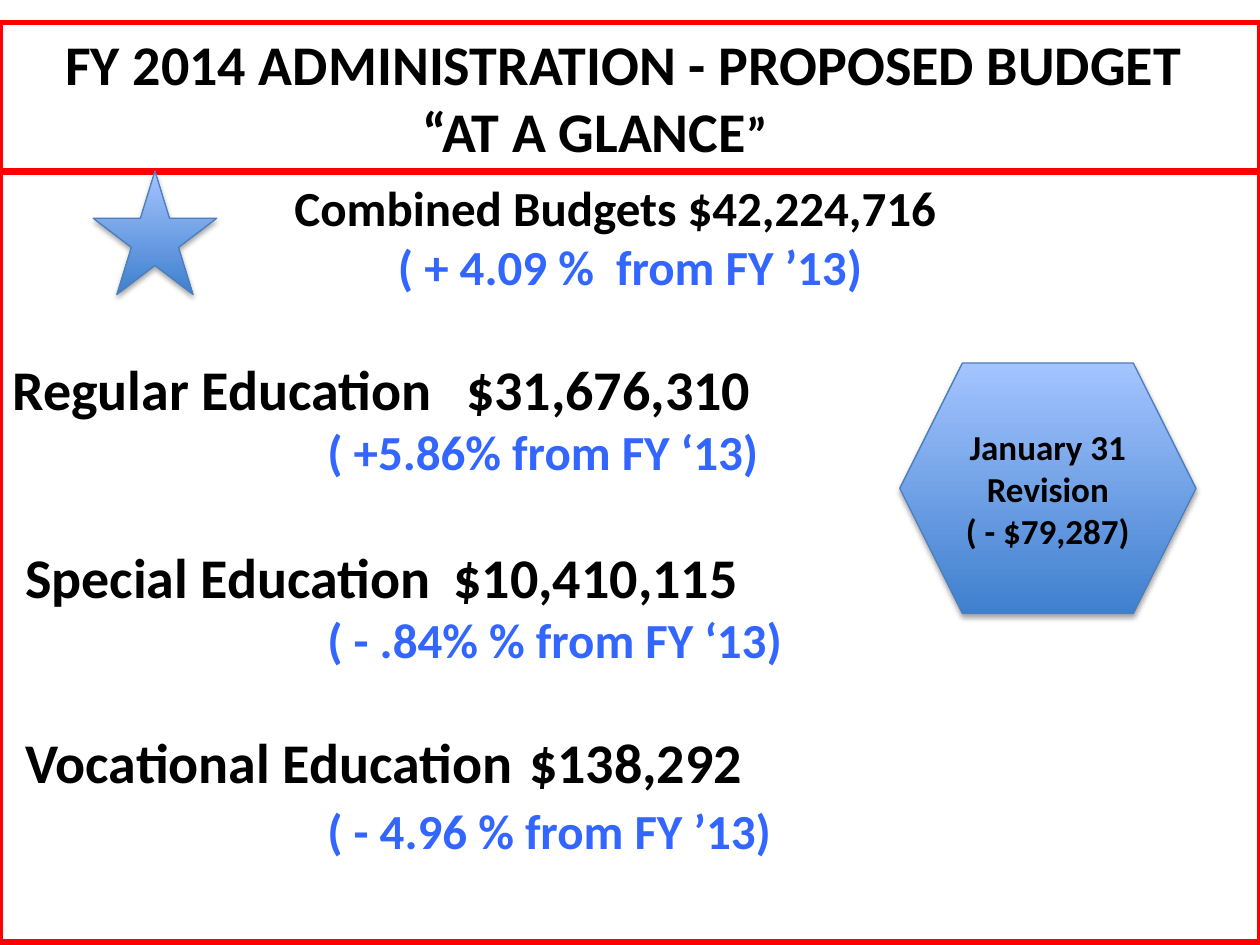
import dataclasses

import lxml.etree
import pptx
import pptx.dml.color
import pptx.enum.shapes
import pptx.enum.text
import pptx.oxml.ns
import pptx.util

Cm = pptx.util.Cm
Pt = pptx.util.Pt
Align = pptx.enum.text.PP_ALIGN
Anchor = pptx.enum.text.MSO_ANCHOR
Shapes = pptx.enum.shapes.MSO_SHAPE


@dataclasses.dataclass(frozen=True)
class Theme:
    font: str = "Calibri"
    ink: str = "000000"
    change: str = "3366FF"
    frame: str = "FF0000"
    badge_dark: str = "3F80CE"
    badge_light: str = "A4C4FF"
    badge_line: str = "4B7EBC"
    large: int = 32
    medium: int = 28
    small: int = 20
    frame_width: float = 3
    badge_width: float = 0.75


@dataclasses.dataclass(frozen=True)
class Box:
    left: float
    top: float
    width: float
    height: float

    def lengths(self):
        return [Cm(value) for value in dataclasses.astuple(self)]


THEME = Theme()


def rgb(code):
    return pptx.dml.color.RGBColor.from_string(code)


def write(para, text, size=THEME.medium, color=THEME.ink, align=Align.LEFT,
          before=0, after=0, spacing=1.0, indent=0):
    para.alignment = align
    para.space_before = Pt(before)
    para.space_after = Pt(after)
    para.line_spacing = spacing
    if indent:
        properties = para._p.get_or_add_pPr()
        properties.set("marL", str(Cm(indent)))
        properties.set("indent", "0")
    span = para.add_run()
    span.text = text
    span.font.name = THEME.font
    span.font.size = Pt(size)
    span.font.bold = True
    span.font.color.rgb = rgb(color)
    return span


def set_frame(shape):
    shape.line.color.rgb = rgb(THEME.frame)
    shape.line.width = Pt(THEME.frame_width)
    shape.text_frame.word_wrap = True
    shape.text_frame.auto_size = pptx.enum.text.MSO_AUTO_SIZE.NONE
    shape.text_frame.vertical_anchor = Anchor.TOP


def add_heading(page, box):
    title = page.shapes.title
    title.left, title.top, title.width, title.height = box.lengths()
    set_frame(title)
    frame = title.text_frame
    write(frame.paragraphs[0], "FY 2014 ADMINISTRATION - PROPOSED BUDGET ",
          size=THEME.large, align=Align.CENTER)
    second = frame.add_paragraph()
    write(second, " “AT A GLANCE", size=THEME.large, align=Align.CENTER)
    write(second, "”\t\t", align=Align.CENTER)


def add_budgets(page, box):
    body = page.shapes.add_textbox(*box.lengths())
    set_frame(body)
    frame = body.text_frame
    write(frame.paragraphs[0], " Combined Budgets $42,224,716\t", align=Align.CENTER)
    write(frame.add_paragraph(), "( + 4.09 %  from FY ’13)",
          color=THEME.change, align=Align.CENTER)
    budgets = [
        ("Regular Education\t $31,676,310", "( +5.86% from FY ‘13)", 34, 1.0),
        (" Special Education\t$10,410,115", "( - .84% % from FY ‘13)", 35.5, 1.0),
        (" Vocational Education\t $138,292", "( - 4.96 % from FY ’13)", 30, 1.1),
    ]
    for amount, change, before, spacing in budgets:
        write(frame.add_paragraph(), amount, size=THEME.large,
              before=before, spacing=spacing)
        write(frame.add_paragraph(), change, color=THEME.change,
              spacing=spacing, indent=6.35)


def add_badge(page, kind, box):
    badge = page.shapes.add_shape(kind, *box.lengths())
    badge.fill.gradient()
    badge.fill.gradient_angle = 90
    for stop, color in zip(badge.fill.gradient_stops,
                           (THEME.badge_dark, THEME.badge_light)):
        stop.color.rgb = rgb(color)
    badge.line.color.rgb = rgb(THEME.badge_line)
    badge.line.width = Pt(THEME.badge_width)
    badge.shadow.inherit = False
    qn = pptx.oxml.ns.qn
    effects = badge._element.spPr.find(qn("a:effectLst"))
    shadow = lxml.etree.SubElement(
        effects, qn("a:outerShdw"), blurRad=str(Pt(3.1)), dist=str(Pt(1.8)),
        dir="5400000", rotWithShape="0")
    tint = lxml.etree.SubElement(shadow, qn("a:srgbClr"), val=THEME.ink)
    lxml.etree.SubElement(tint, qn("a:alpha"), val="35000")
    return badge


def add_revision(page, box):
    frame = add_badge(page, Shapes.HEXAGON, box).text_frame
    frame.word_wrap = True
    frame.vertical_anchor = Anchor.MIDDLE
    write(frame.paragraphs[0], "January 31 Revision",
          size=THEME.small, align=Align.CENTER)
    write(frame.add_paragraph(), "( - $79,287)",
          size=THEME.small, align=Align.CENTER)


def main():
    deck = pptx.Presentation()
    deck.slide_width, deck.slide_height = Cm(25.4), Cm(19.05)
    page = deck.slides.add_slide(deck.slide_layouts.get_by_name("Title Only"))
    add_budgets(page, Box(0, 3.45, 25.4, 15.54))
    add_heading(page, Box(0, 0.46, 25.4, 3.02))
    add_revision(page, Box(18.14, 7.32, 5.97, 5.05))
    add_badge(page, Shapes.STAR_5_POINT, Box(1.88, 3.45, 2.49, 2.49))
    deck.save("out.pptx")


if __name__ == "__main__":
    main()
